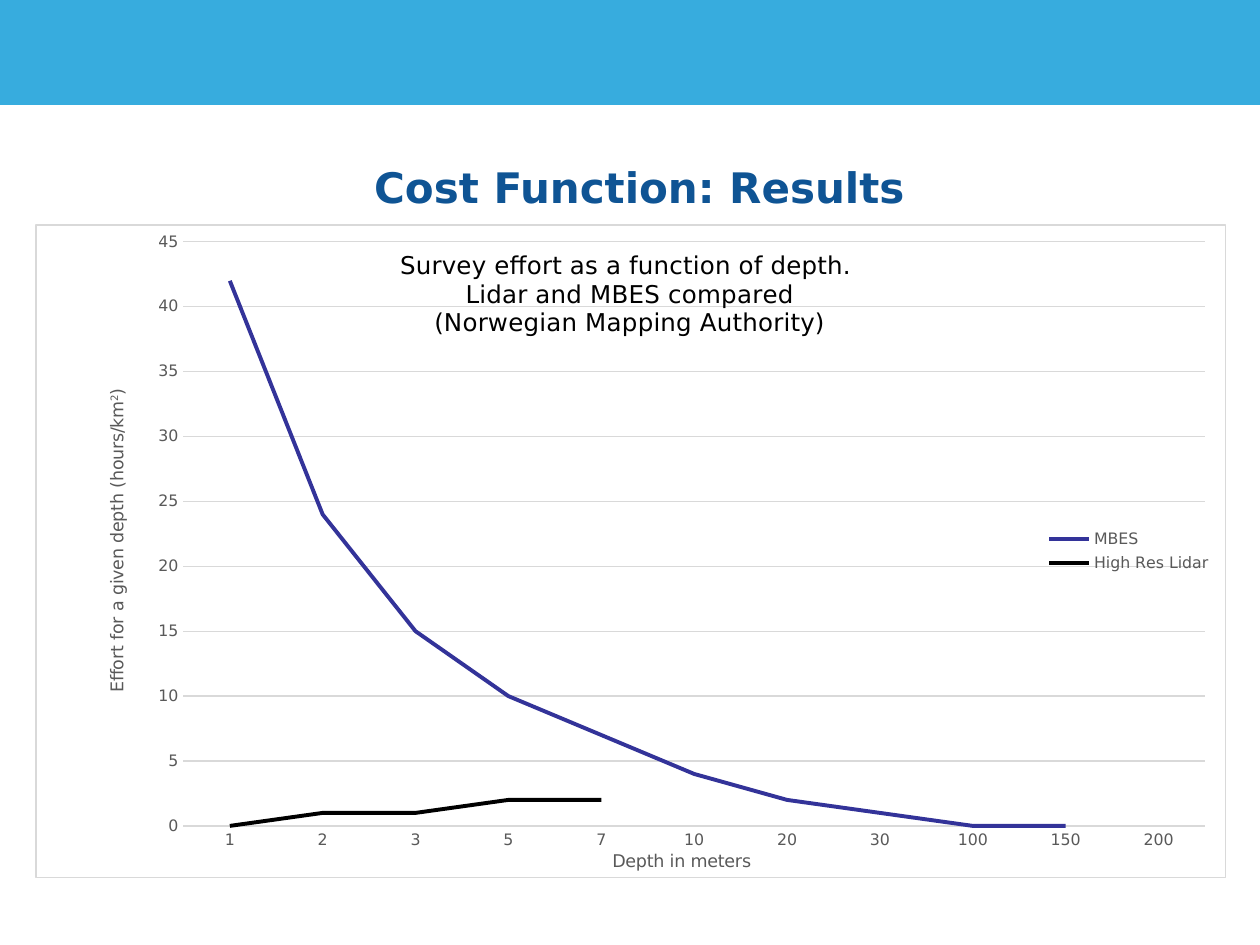
import lxml.etree
import pptx
import pptx.chart.data
import pptx.dml.color
import pptx.enum.chart
import pptx.enum.shapes
import pptx.enum.text
import pptx.oxml
import pptx.oxml.ns
import pptx.util

Inches = pptx.util.Inches
Pt = pptx.util.Pt
qn = pptx.oxml.ns.qn


def rgb(value):
    return pptx.dml.color.RGBColor.from_string(value)


class SlideBuilder:
    """Holds the style and the current slide, and adds its elements."""

    font = "DejaVu Sans"
    band = "37ACDE"
    heading = "0F5494"
    text = "000000"
    muted = "595959"
    rule = "D9D9D9"

    def __init__(self, presentation):
        self.slide = presentation.slides.add_slide(presentation.slide_layouts[5])

    def format_font(self, font, size, color, bold=False):
        font.name = self.font
        font.size = Pt(size)
        font.bold = bold
        font.color.rgb = rgb(color)

    def format_line(self, line, color, width=0.75):
        line.color.rgb = rgb(color)
        line.width = Pt(width)

    def add_run(self, paragraph, text, size, color, bold=False):
        run = paragraph.add_run()
        run.text = text
        self.format_font(run.font, size, color, bold)
        return run

    def add_band(self, left, top, width, height):
        shape = self.slide.shapes.add_shape(
            pptx.enum.shapes.MSO_SHAPE.RECTANGLE,
            Inches(left), Inches(top), Inches(width), Inches(height))
        shape.shadow.inherit = False
        shape.fill.solid()
        shape.fill.fore_color.rgb = rgb(self.band)
        self.format_line(shape.line, self.band)

    def set_title(self, text, left, top, width, height):
        title = self.slide.shapes.title
        title.left, title.top = Inches(left), Inches(top)
        title.width, title.height = Inches(width), Inches(height)
        frame = title.text_frame
        frame.word_wrap = True
        frame.vertical_anchor = pptx.enum.text.MSO_ANCHOR.TOP
        paragraph = frame.paragraphs[0]
        paragraph.alignment = pptx.enum.text.PP_ALIGN.CENTER
        paragraph.space_after = Pt(12)
        self.add_run(paragraph, text, 24, self.heading, True)

    def place(self, element, index, x, y, size=None):
        for layout in element.findall(qn("c:layout")):
            element.remove(layout)
        layout = lxml.etree.Element(qn("c:layout"))
        manual = lxml.etree.SubElement(layout, qn("c:manualLayout"))
        settings = [("xMode", "edge"), ("yMode", "edge"), ("x", x), ("y", y)]
        if size:
            settings += [("w", size[0]), ("h", size[1])]
        if element.tag == qn("c:plotArea"):
            settings.insert(0, ("layoutTarget", "inner"))
        for name, value in settings:
            lxml.etree.SubElement(manual, qn(f"c:{name}")).set("val", str(value))
        element.insert(index, layout)

    def write_title(self, title, lines, size, color, x, y):
        frame = title.text_frame
        for number, line in enumerate(lines):
            paragraph = frame.add_paragraph() if number else frame.paragraphs[0]
            paragraph.alignment = pptx.enum.text.PP_ALIGN.CENTER
            self.add_run(paragraph, line, size, color)
        self.place(title._element, 1, x, y)
        return paragraph

    def format_axis(self, axis):
        axis.major_tick_mark = pptx.enum.chart.XL_TICK_MARK.NONE
        axis.minor_tick_mark = pptx.enum.chart.XL_TICK_MARK.NONE
        self.format_font(axis.tick_labels.font, 9, self.muted)

    def frame_chart(self, chart):
        properties = pptx.oxml.parse_xml(
            f'<c:spPr {pptx.oxml.ns.nsdecls("c", "a")}>'
            '<a:solidFill><a:srgbClr val="FFFFFF"/></a:solidFill>'
            f'<a:ln w="{Pt(0.75)}"><a:solidFill><a:srgbClr val="{self.rule}"/>'
            '</a:solidFill></a:ln></c:spPr>')
        chart._chartSpace.find(qn("c:chart")).addnext(properties)

    def add_line_chart(self, categories, series, left, top, width, height):
        data = pptx.chart.data.CategoryChartData()
        data.categories = categories
        for name, values, color in series:
            data.add_series(name, values)
        chart = self.slide.shapes.add_chart(
            pptx.enum.chart.XL_CHART_TYPE.LINE,
            Inches(left), Inches(top), Inches(width), Inches(height), data).chart
        self.format_font(chart.font, 10, self.text)
        self.frame_chart(chart)
        chart.plots[0].vary_by_categories = False
        for line, (name, values, color) in zip(chart.plots[0].series, series):
            line.smooth = False
            line.marker.style = pptx.enum.chart.XL_MARKER_STYLE.NONE
            self.format_line(line.format.line, color, 2.25)
        for axis in (chart.category_axis, chart.value_axis):
            self.format_axis(axis)
        self.format_line(chart.category_axis.format.line, self.rule)
        chart.value_axis.format.line.fill.background()
        chart.value_axis.minimum_scale = 0
        chart.value_axis.maximum_scale = 45
        chart.value_axis.major_unit = 5
        self.format_line(chart.value_axis.major_gridlines.format.line, self.rule)
        plot_area = chart._chartSpace.find(".//" + qn("c:plotArea"))
        self.place(plot_area, 0, 0.124, 0.026, (0.859, 0.895))
        return chart

    def add_legend(self, chart, x, y, size):
        chart.has_legend = True
        chart.legend.position = pptx.enum.chart.XL_LEGEND_POSITION.RIGHT
        chart.legend.include_in_layout = False
        self.format_font(chart.legend.font, 9, self.muted)
        self.place(chart.legend._element, 1, x, y, size)


def main():
    presentation = pptx.Presentation()
    presentation.slide_width = Inches(10)
    presentation.slide_height = Inches(7.5)
    builder = SlideBuilder(presentation)
    builder.add_band(0, 0, 10, 0.83)
    builder.set_title("Cost Function: Results", 0.35, 1.23, 9.45, 0.5)

    depths = ["1", "2", "3", "5", "7", "10", "20", "30", "100", "150", "200"]
    series = [
        ("MBES", [42, 24, 15, 10, 7, 4, 2, 1, 0, 0, None], "333399"),
        ("High Res Lidar", [0, 1, 1, 2, 2] + [None] * 6, "000000"),
    ]
    chart = builder.add_line_chart(depths, series, 0.28, 1.78, 9.45, 5.19)
    builder.write_title(
        chart.chart_title,
        ["Survey effort as a function of depth. ", "Lidar and MBES compared",
         "(Norwegian Mapping Authority)"],
        14, builder.text, 0.303, 0.03)
    builder.write_title(chart.category_axis.axis_title, ["Depth in meters"],
                        10, builder.muted, 0.482, 0.953)
    effort = builder.write_title(
        chart.value_axis.axis_title, ["Effort for a given depth (hours/km"],
        10, builder.muted, 0.055, 0.245)
    superscript = builder.add_run(effort, "2", 10, builder.muted)
    superscript._r.get_or_add_rPr().set("baseline", "30000")
    builder.add_run(effort, ")", 10, builder.muted)
    builder.add_legend(chart, 0.844, 0.46, (0.15, 0.08))
    presentation.save("out.pptx")


if __name__ == "__main__":
    main()
